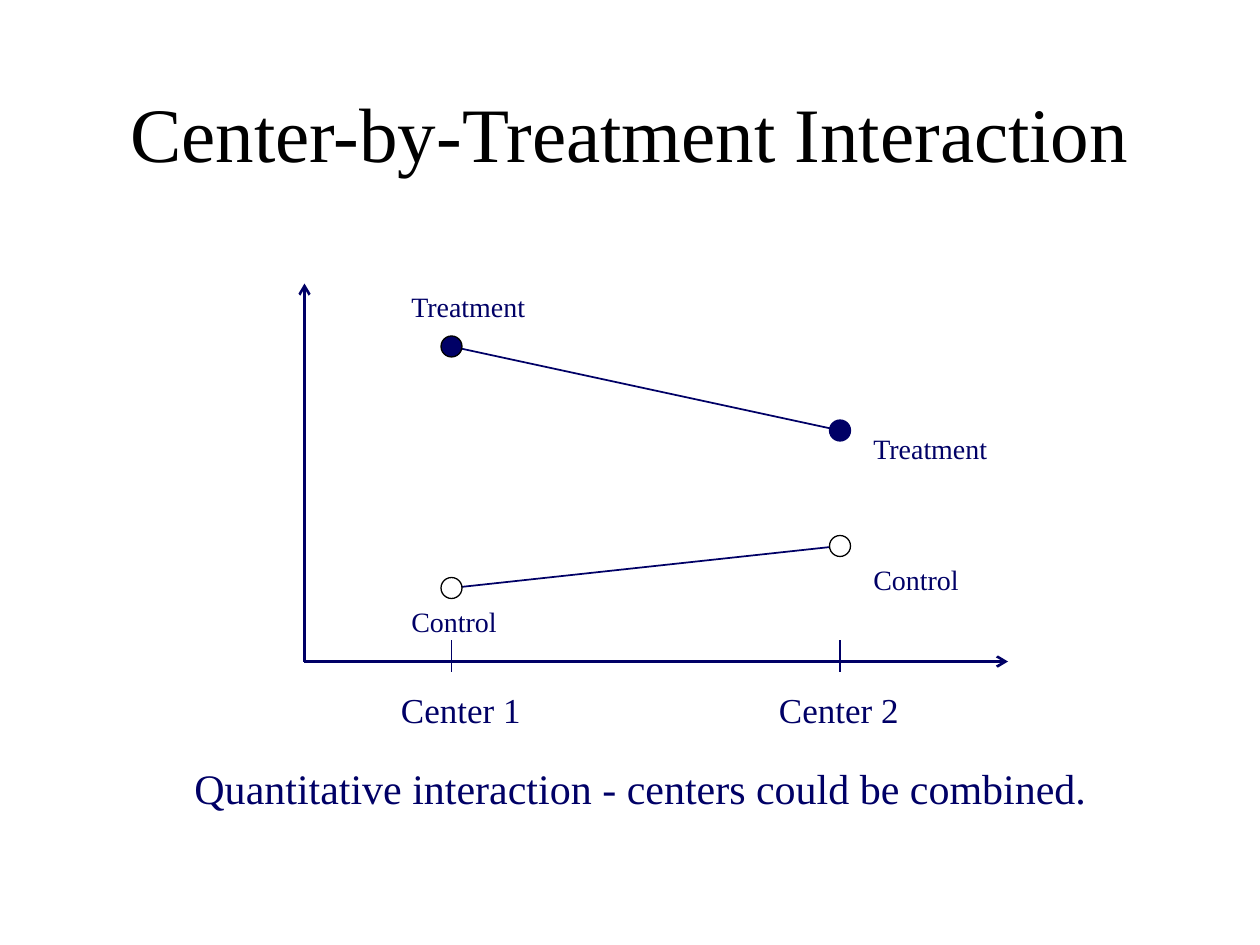
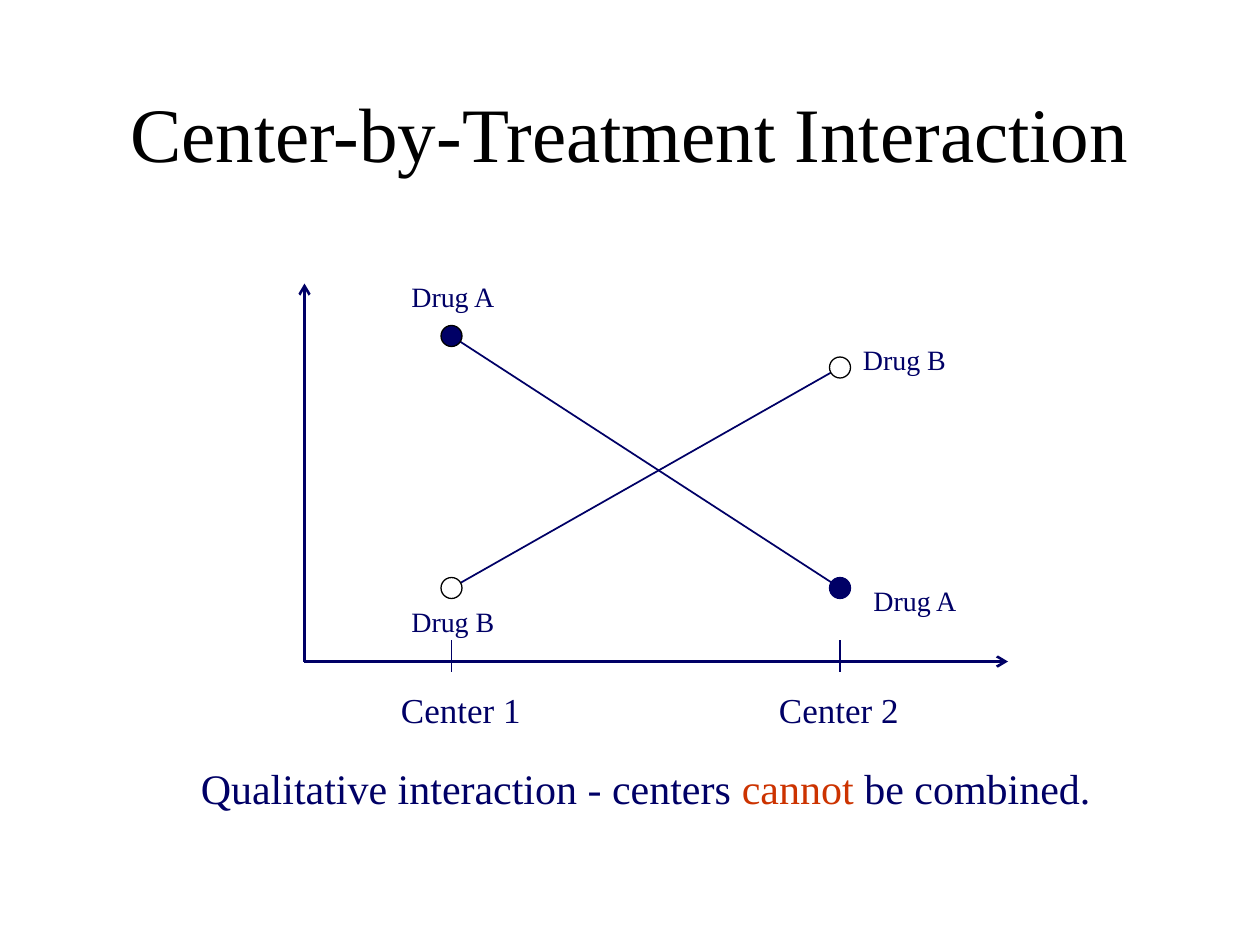
"""Build two slides that plot centre-by-treatment interactions."""
from pptx import Presentation, util as u
from pptx.dml.color import RGBColor
from pptx.enum import shapes, text
from pptx.oxml import ns
from lxml import etree

PX = 9525
NAVY, BLACK, WHITE, RED = "000066", "000000", "FFFFFF", "CC3300"
LEFT, TOP, BASE, RIGHT = 232, 216, 504, 768
CENTERS = (344, 640)
DOT = 16


def px(length):
    return u.Emu(length * PX)


def color(value):
    return RGBColor.from_string(value)


class Deck:
    """Hold the shared style and the current slide."""

    font = "Times New Roman"

    def __init__(self):
        self.presentation = Presentation()
        self.presentation.slide_width = px(960)
        self.presentation.slide_height = px(720)
        self.slide = None

    def new_slide(self):
        layout = self.presentation.slide_layouts[6]
        self.slide = self.presentation.slides.add_slide(layout)
        fill = self.slide.background.fill
        fill.solid()
        fill.fore_color.rgb = color(WHITE)

    def text(self, box, words, size, ink=NAVY, align=text.PP_ALIGN.LEFT,
             anchor=text.MSO_ANCHOR.TOP, highlight=None):
        frame = self.slide.shapes.add_textbox(*map(px, box)).text_frame
        frame.word_wrap = True
        frame.vertical_anchor = anchor
        paragraph = frame.paragraphs[0]
        paragraph.alignment = align
        paragraph.font.name = self.font
        paragraph.font.size = u.Pt(size)
        before, found, after = words.partition(highlight) if highlight else (words, "", "")
        for part in filter(None, (before, found, after)):
            run = paragraph.add_run()
            run.text = part
            run.font.color.rgb = color(RED if part == highlight else ink)

    def line(self, start, end, width, arrow=False):
        connector = self.slide.shapes.add_connector(
            shapes.MSO_CONNECTOR.STRAIGHT, *map(px, start + end))
        connector.line.color.rgb = color(NAVY)
        connector.line.width = u.Pt(width)
        if arrow:
            outline = connector.line._get_or_add_ln()
            etree.SubElement(outline, ns.qn("a:tailEnd"), type="arrow")
        etree.SubElement(connector._element.spPr, ns.qn("a:effectLst"))

    def dot(self, x, y, fill, outline):
        box = (x - DOT // 2, y - DOT // 2, DOT, DOT)
        shape = self.slide.shapes.add_shape(shapes.MSO_SHAPE.OVAL, *map(px, box))
        shape.shadow.inherit = False
        shape.fill.solid()
        shape.fill.fore_color.rgb = color(fill)
        shape.line.color.rgb = color(outline)
        shape.line.width = u.Pt(0.75)

    def title(self, words):
        self.text((72, 40, 816, 120), words, 44, BLACK,
                  text.PP_ALIGN.CENTER, text.MSO_ANCHOR.MIDDLE)

    def caption(self, left, width, words, highlight=None):
        self.text((left, 576, width, 48), words, 24,
                  align=text.PP_ALIGN.CENTER, highlight=highlight)

    def axes(self):
        for end in ((RIGHT, BASE), (LEFT, TOP)):
            self.line((LEFT, BASE), end, 1.5, arrow=True)
        for number, (x, left) in enumerate(zip(CENTERS, (296, 584)), 1):
            self.line((x, 488), (x, 512), 0.75)
            self.text((left, 520, 112, 41), f"Center {number}", 20)

    def series(self, name, heights, labels, fill, outlines):
        points = list(zip(CENTERS, heights))
        self.line(*points, 1)
        for point, outline in zip(points, outlines):
            self.dot(*point, fill, outline)
        for label in labels:
            self.text((*label, 112, 36), name, 16)


def interaction_slide(deck, filled, hollow, caption):
    deck.new_slide()
    deck.title("Center-by-Treatment Interaction")
    deck.axes()
    deck.series(*hollow, WHITE, (BLACK, BLACK))
    deck.series(*filled, NAVY, (BLACK, NAVY))
    deck.caption(*caption)


def main():
    deck = Deck()
    interaction_slide(
        deck,
        ("Treatment", (264, 328), ((304, 216), (656, 324))),
        ("Control", (448, 416), ((304, 456), (656, 424))),
        (128, 720, "Quantitative interaction - centers could be combined."))
    interaction_slide(
        deck,
        ("Drug A", (256, 448), ((304, 208), (656, 440))),
        ("Drug B", (448, 280), ((304, 456), (648, 256))),
        (136, 712, "Qualitative interaction - centers cannot be combined.", "cannot"))
    deck.presentation.save("out.pptx")


if __name__ == "__main__":
    main()
